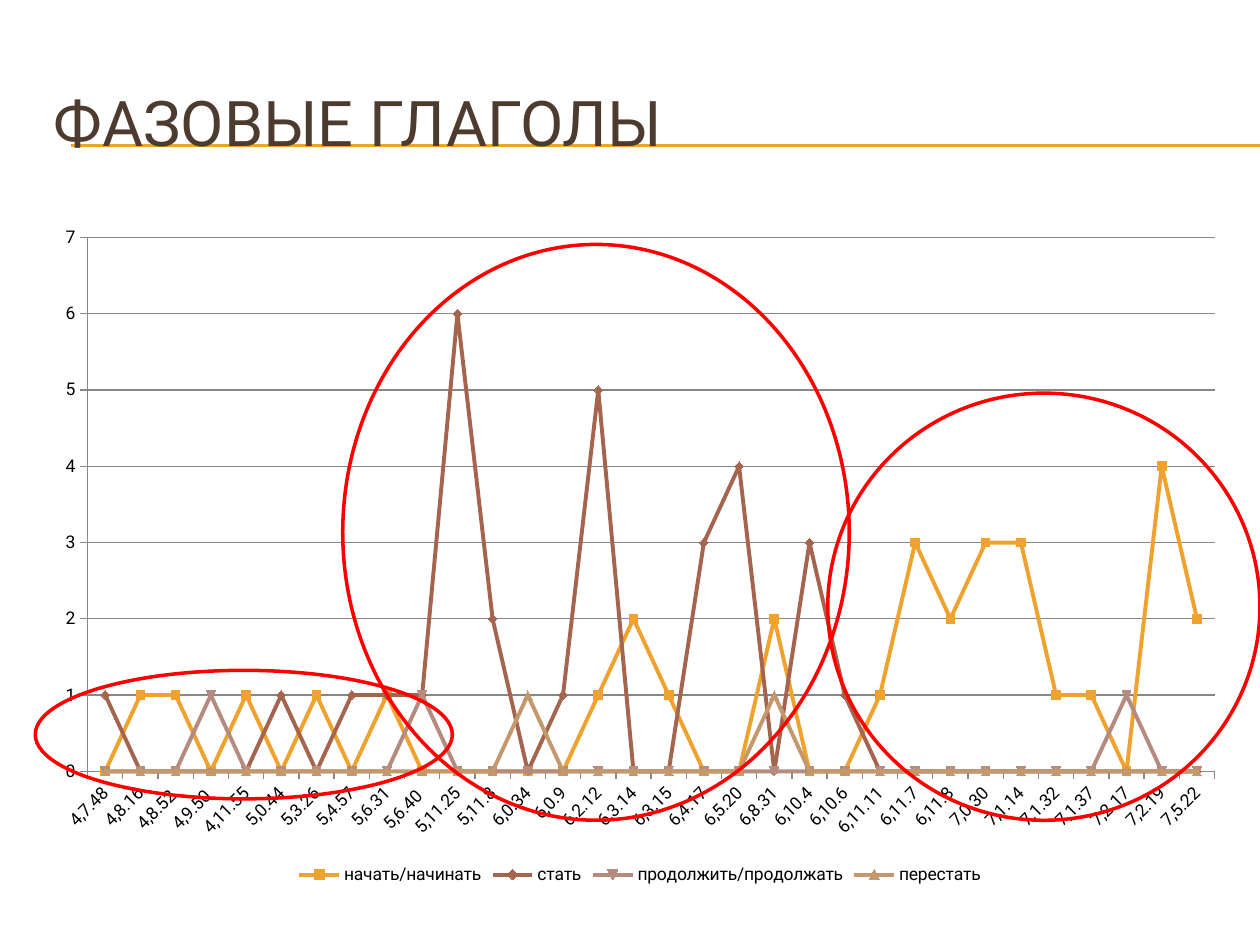
from lxml import etree
from pptx import Presentation
from pptx.chart.data import CategoryChartData
from pptx.dml.color import RGBColor
from pptx.enum.chart import XL_CHART_TYPE, XL_LEGEND_POSITION, XL_TICK_MARK
from pptx.enum.shapes import MSO_CONNECTOR, MSO_SHAPE
from pptx.enum.text import MSO_ANCHOR
from pptx.oxml.ns import qn
from pptx.util import Inches, Pt

LINE_MARKERS = XL_CHART_TYPE.LINE_MARKERS
BOTTOM = XL_LEGEND_POSITION.BOTTOM
OUTSIDE = XL_TICK_MARK.OUTSIDE
STRAIGHT = MSO_CONNECTOR.STRAIGHT
OVAL = MSO_SHAPE.OVAL
MIDDLE = MSO_ANCHOR.MIDDLE
FONT = "Roboto"


def style_line(line, color, width):
    line.color.rgb = RGBColor.from_string(color)
    line.width = Pt(width)


def style_font(font, color, size):
    font.name = FONT
    font.size = Pt(size)
    font.color.rgb = RGBColor.from_string(color)


prs = Presentation()
prs.slide_width, prs.slide_height = Inches(10), Inches(7.5)
slide = prs.slides.add_slide(prs.slide_layouts[6])

# Double rule under the title
for y in (1.15, 1.16):
    rule = slide.shapes.add_connector(
        STRAIGHT, Inches(0.56), Inches(y), Inches(10), Inches(y))
    style_line(rule.line, "F0A22E", 0.75)
    etree.SubElement(rule._element.spPr, qn("a:effectLst"))

title = slide.shapes.add_textbox(
    Inches(0.33), Inches(0.5), Inches(9.5), Inches(0.92)).text_frame
title.word_wrap = True
title.vertical_anchor = MIDDLE
heading = title.paragraphs[0]
heading.text = "ФАЗОВЫЕ ГЛАГОЛЫ"
style_font(heading.font, "4E3B30", 36)

# Verb counts by passage
passages = [
    "4,7.48", "4,8.16", "4,8.52 ", "4,9.50 ", "4,11.55", "5,0.44", "5,3.26", "5,4.57",
    "5,6.31", "5,6.40 ", "5,11.25", "5,11.8", "6,0.34", "6,0.9", "6,2.12", "6,3.14",
    "6,3.15", "6,4.17", "6,5.20", "6,8.31", "6,10.4", "6,10.6", "6,11.11", "6,11.7",
    "6,11.8", "7,0.30", "7,1.14", "7,1.32", "7,1.37", "7,2.17", "7,2.19", "7,5.22",
]
# Non-zero counts only, keyed by passage position
verbs = [
    ("начать/начинать", "F0A22E",
     {1: 1, 2: 1, 4: 1, 6: 1, 8: 1, 14: 1, 15: 2, 16: 1, 19: 2, 22: 1, 23: 3,
      24: 2, 25: 3, 26: 3, 27: 1, 28: 1, 30: 4, 31: 2}),
    ("стать", "A5644E",
     {0: 1, 5: 1, 7: 1, 8: 1, 9: 1, 10: 6, 11: 2, 13: 1, 14: 5, 17: 3, 18: 4,
      20: 3, 21: 1}),
    ("продолжить/продолжать", "B58B80", {3: 1, 9: 1, 29: 1}),
    ("перестать", "C3986D", {12: 1, 19: 1}),
]
counts_data = CategoryChartData()
counts_data.categories = passages
for verb, _, counts in verbs:
    counts_data.add_series(verb, [counts.get(i, 0) for i in range(len(passages))])

chart = slide.shapes.add_chart(
    LINE_MARKERS, Inches(0.33), Inches(1.7), Inches(9.5), Inches(5.36),
    counts_data).chart
style_font(chart.font, "000000", 10)
chart.has_title = False
chart.has_legend = True
chart.legend.position = BOTTOM
chart.legend.include_in_layout = False
chart.plots[0].vary_by_categories = False

for series, (_, color, _) in zip(chart.plots[0].series, verbs):
    series.smooth = False
    style_line(series.format.line, color, 2.25)
    series.marker.format.fill.solid()
    series.marker.format.fill.fore_color.rgb = RGBColor.from_string(color)
    style_line(series.marker.format.line, color, 0.75)

count_axis, passage_axis = chart.value_axis, chart.category_axis
for axis in (count_axis, passage_axis):
    axis.major_tick_mark = OUTSIDE
    style_line(axis.format.line, "878787", 0.75)
    style_font(axis.tick_labels.font, "000000", 10)
passage_axis._element.txPr.bodyPr.set("rot", "-2700000")
count_axis.minimum_scale, count_axis.maximum_scale = 0, 7
count_axis.major_unit = 1
count_axis.has_major_gridlines = True
style_line(count_axis.major_gridlines.format.line, "878787", 0.75)

# Ellipses around the three groups of passages
for left, top, width, height in (
    (2.72, 1.94, 4.02, 4.57),
    (6.57, 3.12, 3.43, 3.39),
    (0.28, 5.32, 3.31, 1.02),
):
    group_mark = slide.shapes.add_shape(
        OVAL, Inches(left), Inches(top), Inches(width), Inches(height))
    group_mark.shadow.inherit = False
    group_mark.fill.background()
    style_line(group_mark.line, "FF0000", 2)

prs.save("out.pptx")
